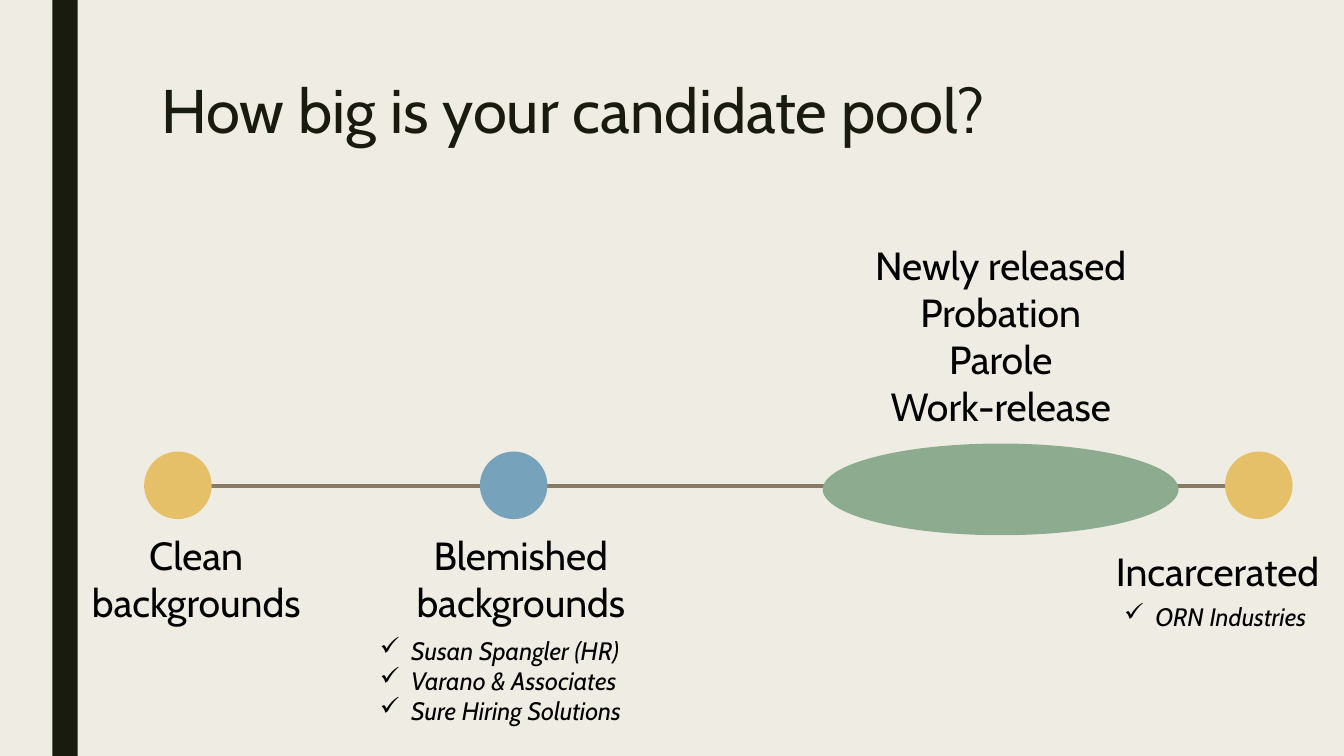
from lxml import etree
from pptx import Presentation
from pptx.dml.color import RGBColor
from pptx.enum.shapes import MSO_CONNECTOR, MSO_SHAPE
from pptx.enum.text import PP_ALIGN
from pptx.oxml.ns import qn
from pptx.util import Pt

PX = 9144
FONT = "Cabin"
LEFT, CENTER = PP_ALIGN.LEFT, PP_ALIGN.CENTER
RECT, OVAL = MSO_SHAPE.RECTANGLE, MSO_SHAPE.OVAL
STRAIGHT = MSO_CONNECTOR.STRAIGHT
COLORS = {
    "paper": "EFEDE3",
    "dark": "191B0E",
    "line": "897B61",
    "gold": "E6C069",
    "blue": "77A2BB",
    "green": "8DAB8E",
    "black": "000000",
}


def color(name):
    return RGBColor.from_string(COLORS[name])


def scale(*sizes):
    return [size * PX for size in sizes]


def add_shape(slide, kind, box, fill):
    shape = slide.shapes.add_shape(kind, *scale(*box))
    shape.shadow.inherit = False
    shape.fill.solid()
    shape.fill.fore_color.rgb = color(fill)
    shape.line.fill.background()


def add_line(slide, ends):
    line = slide.shapes.add_connector(STRAIGHT, *scale(*ends))
    line.line.color.rgb = color("line")
    line.line.width = Pt(2.75)
    etree.SubElement(line._element.spPr, qn("a:effectLst"))


def add_check(para):
    props = para._p.get_or_add_pPr()
    props.set("marL", str(31 * PX))
    props.set("indent", str(-31 * PX))
    etree.SubElement(props, qn("a:buChar"), char="✓")


def add_text(slide, box, lines, size=28, align=CENTER, ink="black", check=False, space=None):
    frame = slide.shapes.add_textbox(*scale(*box)).text_frame
    frame.word_wrap = True
    frame.text = "\n".join(lines)
    for para in frame.paragraphs:
        if check:
            add_check(para)
        para.alignment = align
        para.line_spacing = space
        para.font.name = FONT
        para.font.size = Pt(size)
        para.font.italic = check
        para.font.color.rgb = color(ink)


def add_checks(slide, box, lines):
    add_text(slide, box, lines, size=18, align=LEFT, check=True)


def main():
    deck = Presentation()
    deck.slide_width, deck.slide_height = scale(1333, 750)
    slide = deck.slides.add_slide(deck.slide_layouts[6])
    slide.background.fill.solid()
    slide.background.fill.fore_color.rgb = color("paper")

    add_shape(slide, RECT, (52, 0, 25, 750), "dark")
    add_text(slide, (150, 75, 1050, 162), ["How big is your candidate pool?"],
             size=44, align=LEFT, ink="dark", space=0.89)

    add_line(slide, (143, 482, 1257, 482))
    for left, fill in ((143, "gold"), (476, "blue"), (1215, "gold")):
        add_shape(slide, OVAL, (left, 448, 67, 67), fill)
    add_shape(slide, OVAL, (816, 440, 353, 91), "green")

    add_text(slide, (69, 522, 251, 104), ["Clean backgrounds"])
    add_text(slide, (364, 522, 305, 104), ["Blemished backgrounds"])
    add_text(slide, (1097, 538, 236, 57), ["Incarcerated"], align=LEFT)
    add_text(slide, (855, 234, 275, 199),
             ["Newly released", "Probation", "Parole", "Work-release"])

    add_checks(slide, (367, 625, 353, 101),
               ["Susan Spangler (HR)", "Varano & Associates", "Sure Hiring Solutions"])
    add_checks(slide, (1105, 592, 228, 40), ["ORN Industries"])
    deck.save("out.pptx")


if __name__ == "__main__":
    main()
